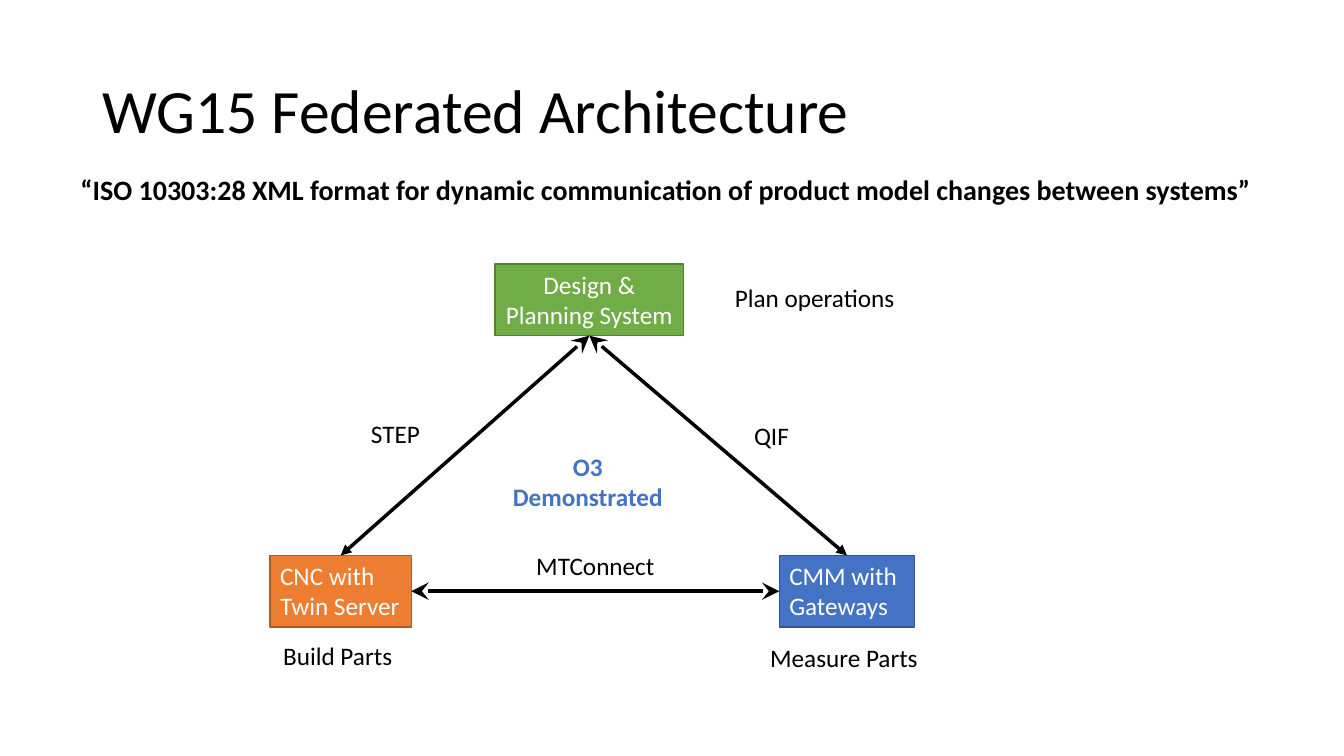
from typing import NamedTuple

from lxml import etree
from pptx import Presentation
from pptx import util as u
from pptx.dml.color import RGBColor
from pptx.enum import shapes, text
from pptx.oxml import ns

PX = 9144  # EMU per px, 100 px to the inch
FONT = "Calibri"
BLACK, WHITE, BLUE = "000000", "FFFFFF", "4472C4"
LEFT, CENTER = text.PP_ALIGN.LEFT, text.PP_ALIGN.CENTER
TOP_SIDE, LEFT_SIDE, BOTTOM_SIDE, RIGHT_SIDE = range(4)


class Label(NamedTuple):
    left: int
    top: int
    width: int
    height: int
    lines: tuple[str, ...]
    size: int = 18
    color: str = BLACK
    bold: bool = False
    align: text.PP_ALIGN = LEFT


class System(NamedTuple):
    label: Label
    fill: str
    border: str


class Link(NamedTuple):
    start: str
    start_side: int
    end: str
    end_side: int
    tail: str


def px(value: int) -> u.Emu:
    return u.Emu(value * PX)


def rgb(value: str) -> RGBColor:
    return RGBColor.from_string(value)


def write(shape, label: Label) -> None:
    frame = shape.text_frame
    frame.word_wrap = False
    frame.vertical_anchor = text.MSO_ANCHOR.TOP
    frame.text = "\n".join(label.lines)
    for para in frame.paragraphs:
        para.alignment = label.align
        para.font.name = FONT
        para.font.size = u.Pt(label.size)
        para.font.bold = label.bold
        para.font.color.rgb = rgb(label.color)


def add_label(page, label: Label):
    box = page.shapes.add_textbox(*map(px, label[:4]))
    write(box, label)
    return box


def add_system(page, system: System):
    box = page.shapes.add_shape(
        shapes.MSO_SHAPE.RECTANGLE, *map(px, system.label[:4]))
    box.shadow.inherit = False
    box.fill.solid()
    box.fill.fore_color.rgb = rgb(system.fill)
    box.line.color.rgb = rgb(system.border)
    box.line.width = u.Pt(1)
    write(box, system.label)
    return box


def add_link(page, boxes: dict, link: Link) -> None:
    line = page.shapes.add_connector(shapes.MSO_CONNECTOR.STRAIGHT, 0, 0, 0, 0)
    line.begin_connect(boxes[link.start], link.start_side)
    line.end_connect(boxes[link.end], link.end_side)
    line.line.color.rgb = rgb(BLACK)
    line.line.width = u.Pt(2.5)
    outline = line.line._get_or_add_ln()
    for tag, kind in (("a:headEnd", "stealth"), ("a:tailEnd", link.tail)):
        size = "lg" if kind == "stealth" else "med"
        etree.SubElement(outline, ns.qn(tag), type=kind, w=size, len=size)
    etree.SubElement(line._element.spPr, ns.qn("a:effectLst"))


TITLE = Label(92, 40, 1150, 145, ("WG15 Federated Architecture",), size=44)

SYSTEMS = {
    "design": System(
        Label(491, 262, 187, 71, ("Design &", "Planning System"),
              color=WHITE, align=CENTER), "70AD47", "538035"),
    "cnc": System(
        Label(268, 551, 140, 71, ("CNC with", "Twin Server"), color=WHITE),
        "ED7D31", "AF5C24"),
    "cmm": System(
        Label(773, 551, 134, 71, ("CMM with", "Gateways"), color=WHITE),
        BLUE, "325491"),
}

LINKS = (
    Link("cnc", RIGHT_SIDE, "cmm", LEFT_SIDE, "stealth"),
    Link("design", BOTTOM_SIDE, "cnc", TOP_SIDE, "triangle"),
    Link("design", BOTTOM_SIDE, "cmm", TOP_SIDE, "triangle"),
)

LABELS = (
    Label(738, 412, 55, 40, ("QIF",)),
    Label(358, 410, 69, 40, ("STEP",)),
    Label(522, 541, 139, 40, ("MTConnect",)),
    Label(271, 630, 129, 40, ("Build Parts",)),
    Label(754, 632, 168, 40, ("Measure Parts",)),
    Label(719, 275, 180, 40, ("Plan operations",)),
    Label(70, 166, 1197, 44,
          ("“ISO 10303:28 XML format for dynamic communication of product "
           "model changes between systems”",), size=20, bold=True),
    Label(498, 443, 170, 71, ("O3", "Demonstrated"),
          color=BLUE, bold=True, align=CENTER),
)


def main() -> None:
    deck = Presentation()
    deck.slide_width, deck.slide_height = px(1333), px(750)
    page = deck.slides.add_slide(deck.slide_layouts[6])

    # Title
    title = add_label(page, TITLE)
    title.text_frame.word_wrap = True
    title.text_frame.vertical_anchor = text.MSO_ANCHOR.MIDDLE
    title.text_frame.paragraphs[0].line_spacing = 0.9

    # Systems and the links between them
    boxes = {name: add_system(page, system) for name, system in SYSTEMS.items()}
    for link in LINKS:
        add_link(page, boxes, link)

    # Captions
    for label in LABELS:
        add_label(page, label)

    deck.save("out.pptx")


if __name__ == "__main__":
    main()
